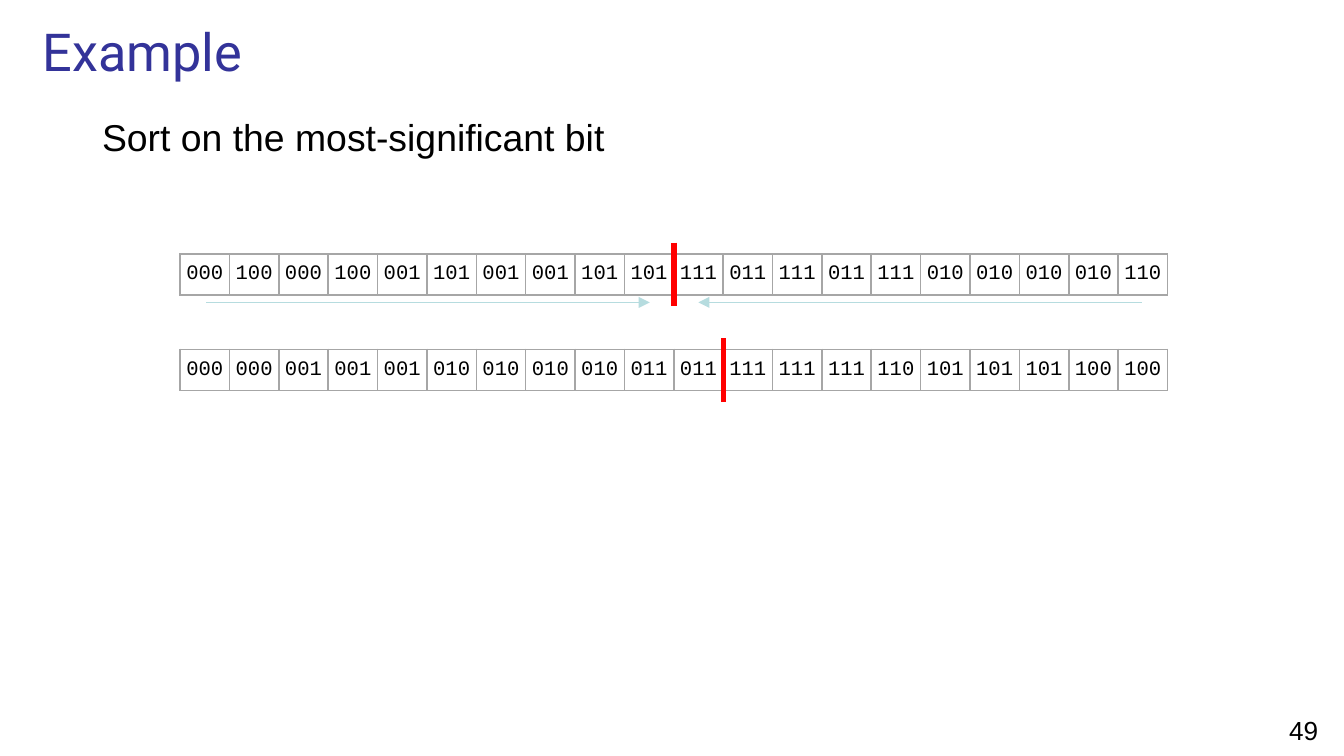
"""Build a slide showing one partitioning step of a radix sort on three-bit keys."""
from dataclasses import dataclass

from lxml import etree
from pptx import Presentation
from pptx.dml.color import RGBColor
from pptx.enum.shapes import MSO_CONNECTOR
from pptx.enum.text import MSO_ANCHOR, PP_ALIGN
from pptx.oxml.ns import qn
from pptx.util import Pt

STRAIGHT = MSO_CONNECTOR.STRAIGHT
TOP, MIDDLE = MSO_ANCHOR.TOP, MSO_ANCHOR.MIDDLE
LEFT, CENTER = PP_ALIGN.LEFT, PP_ALIGN.CENTER


@dataclass(frozen=True)
class TextStyle:
    font: str
    size: float
    color: str


@dataclass(frozen=True)
class Theme:
    title: TextStyle = TextStyle("Roboto", 28, "333399")
    body: TextStyle = TextStyle("Arial", 20, "000000")
    key: TextStyle = TextStyle("Courier New", 11, "000000")
    page: TextStyle = TextStyle("Arial", 14, "000000")
    border: str = "A6A6A6"
    divider: str = "FF0000"
    scan: str = "B6DCDF"
    cell_fill: str = "FFFFFF"


@dataclass(frozen=True)
class Label:
    text: str
    left: float
    top: float
    width: float
    height: float
    style: TextStyle
    align: PP_ALIGN = LEFT
    anchor: MSO_ANCHOR = TOP
    inset_left: float = 7.2
    inset_top: float = 3.6


@dataclass(frozen=True)
class KeyRow:
    keys: str
    top: float
    split: int

    @property
    def split_x(self) -> float:
        return ROW_LEFT + self.split * CELL_WIDTH


THEME = Theme()
ROW_LEFT, CELL_WIDTH, ROW_HEIGHT = 96.5, 26.46, 22
DIVIDER_OVERHANG = 6
SCAN_DROP, SCAN_GAP, SCAN_LENGTH = 26, 13, 237.6

LABELS = [
    Label("49", 676.8, 379.4, 43.2, 21.6, THEME.page, align=CENTER),
    Label("Example", 15.8, 5.8, 701.3, 42.5, THEME.title, anchor=MIDDLE),
    Label("Sort on the most-significant bit", 31.7, 55.4, 659.5, 315.4, THEME.body,
          inset_left=23, inset_top=5.6),
]
BEFORE = KeyRow("000 100 000 100 001 101 001 001 101 101 "
                "111 011 111 011 111 010 010 010 010 110", 136, 10)
AFTER = KeyRow("000 000 001 001 001 010 010 010 010 011 "
               "011 111 111 111 110 101 101 101 100 100", 187.2, 11)


def style_paragraph(paragraph, style: TextStyle, align: PP_ALIGN) -> None:
    """Apply one text style and alignment to a paragraph."""
    paragraph.alignment = align
    paragraph.font.name = style.font
    paragraph.font.size = Pt(style.size)
    paragraph.font.color.rgb = RGBColor.from_string(style.color)


def add_label(slide, label: Label) -> None:
    """Add a wrapped text box."""
    box = slide.shapes.add_textbox(Pt(label.left), Pt(label.top), Pt(label.width), Pt(label.height))
    frame = box.text_frame
    frame.word_wrap = True
    frame.vertical_anchor = label.anchor
    frame.margin_left, frame.margin_top = Pt(label.inset_left), Pt(label.inset_top)
    frame.text = label.text
    style_paragraph(frame.paragraphs[0], label.style, label.align)


def set_borders(cell, color: str, width: float) -> None:
    """Draw the same solid border on all four sides of a cell."""
    properties = cell._tc.get_or_add_tcPr()
    for position, side in enumerate(("a:lnL", "a:lnR", "a:lnT", "a:lnB")):
        line = etree.Element(qn(side), w=str(Pt(width)))
        fill = etree.SubElement(line, qn("a:solidFill"))
        etree.SubElement(fill, qn("a:srgbClr"), val=color)
        properties.insert(position, line)


def add_line(slide, start: tuple[float, float], end: tuple[float, float],
             color: str, width: float, arrow: bool = False) -> None:
    """Add a straight line, with an arrowhead at its end on request."""
    line = slide.shapes.add_connector(STRAIGHT, *map(Pt, start + end))
    line.line.color.rgb = RGBColor.from_string(color)
    line.line.width = Pt(width)
    if arrow:
        etree.SubElement(line.line._get_or_add_ln(), qn("a:tailEnd"), type="triangle")
    etree.SubElement(line._element.spPr, qn("a:effectLst"))


def add_key_row(slide, row: KeyRow) -> None:
    """Add the keys as a one-row table."""
    keys = row.keys.split()
    table = slide.shapes.add_table(1, len(keys), Pt(ROW_LEFT), Pt(row.top),
                                   Pt(CELL_WIDTH * len(keys)), Pt(ROW_HEIGHT)).table
    table.first_row = table.horz_banding = False
    for column, key in enumerate(keys):
        table.columns[column].width = Pt(CELL_WIDTH)
        cell = table.cell(0, column)
        cell.text = key
        cell.vertical_anchor = MIDDLE
        cell.margin_left = cell.margin_right = cell.margin_top = cell.margin_bottom = 0
        cell.fill.solid()
        cell.fill.fore_color.rgb = RGBColor.from_string(THEME.cell_fill)
        style_paragraph(cell.text_frame.paragraphs[0], THEME.key, CENTER)
        set_borders(cell, THEME.border, 1)


def add_divider(slide, row: KeyRow) -> None:
    """Mark the split between the two partitions of a row."""
    add_line(slide, (row.split_x, row.top - DIVIDER_OVERHANG),
             (row.split_x, row.top + ROW_HEIGHT + DIVIDER_OVERHANG), THEME.divider, 3)


def add_scans(slide, row: KeyRow) -> None:
    """Add the two arrows that run from the row ends towards its split."""
    y = row.top + SCAN_DROP
    for direction in (-1, 1):
        inner = row.split_x + direction * SCAN_GAP
        add_line(slide, (inner + direction * SCAN_LENGTH, y), (inner, y), THEME.scan, 0.75, arrow=True)


def main() -> None:
    """Build and save the slide."""
    presentation = Presentation()
    presentation.slide_width, presentation.slide_height = Pt(720), Pt(405)
    slide = presentation.slides.add_slide(presentation.slide_layouts[6])
    for label in LABELS:
        add_label(slide, label)
    for row in (BEFORE, AFTER):
        add_key_row(slide, row)
    for row in (AFTER, BEFORE):
        add_divider(slide, row)
    add_scans(slide, BEFORE)
    presentation.save("out.pptx")


if __name__ == "__main__":
    main()
